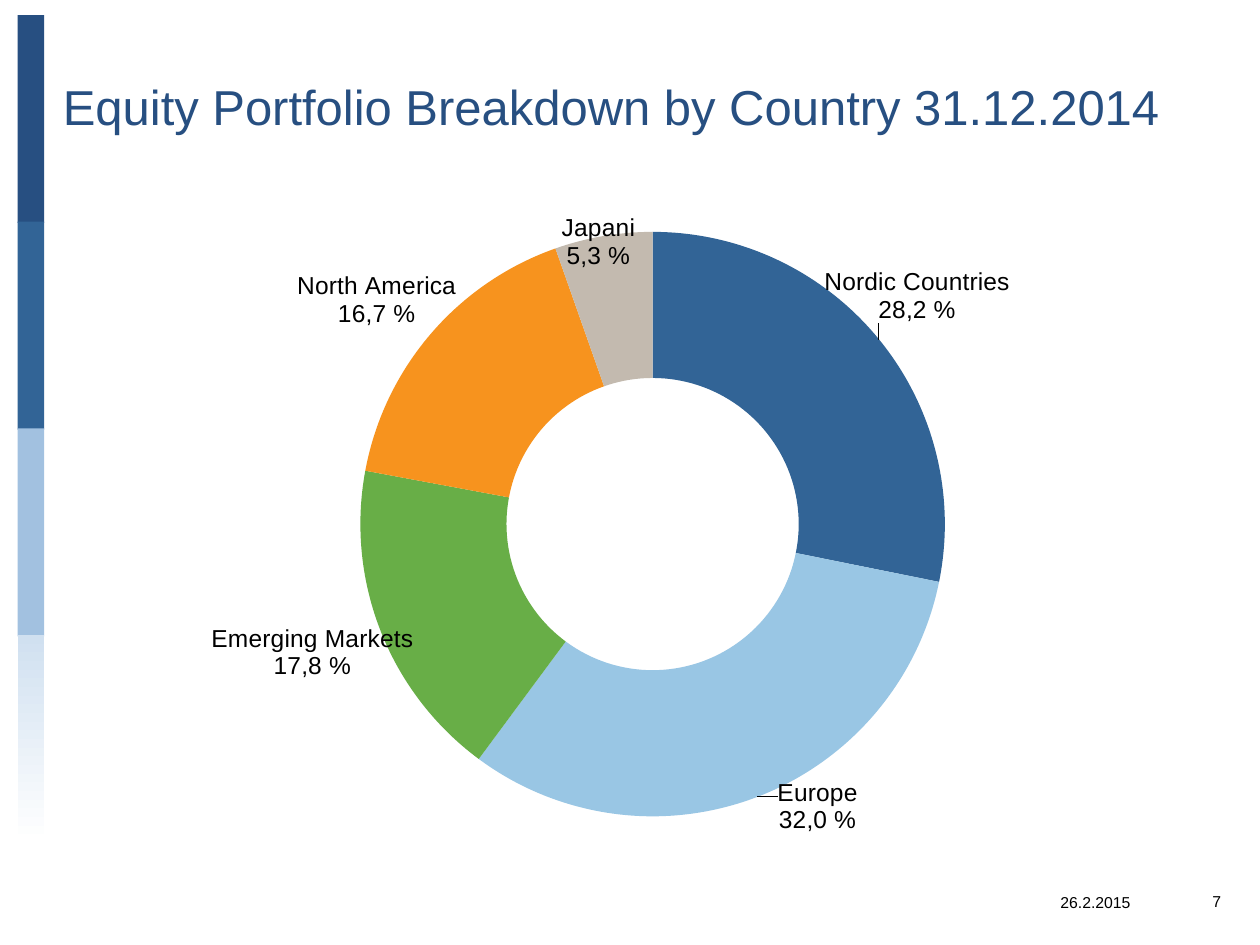
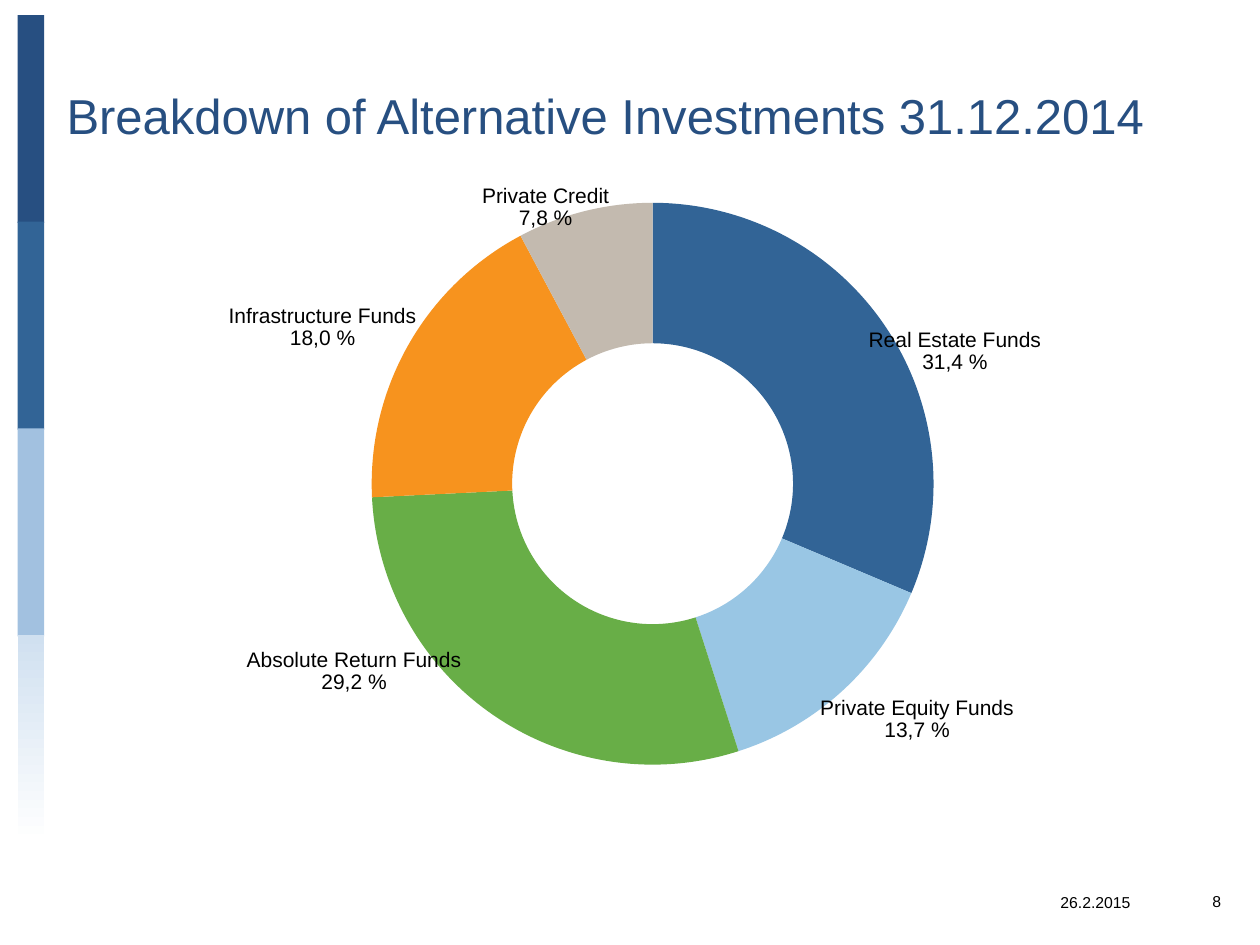
from dataclasses import dataclass
from math import cos, pi, sin

from pptx import Presentation
from pptx import oxml
from pptx.chart import data as chart_data
from pptx.dml import color
from pptx.enum import chart as chart_enum, shapes, text
from pptx.oxml import ns
from pptx.util import Inches, Pt

FONT = "Arial"
COLORS = {
    "navy": "274F81",
    "blue": "326496",
    "pale": "A2C1E0",
    "mist": "D0E0F0",
    "white": "FFFFFF",
    "black": "000000",
    "sky": "99C6E4",
    "green": "68AE47",
    "orange": "F7931E",
    "stone": "C3BAAF",
}
SLICE_COLORS = ["blue", "sky", "green", "orange", "stone"]
BAND_COLORS = ["navy", "blue", "pale", None]  # None marks the fading band
BAND_PITCH = 1.64
DATE = "26.2.2015"
PERCENT = "0.0\\ %"


@dataclass(frozen=True)
class Box:
    left: float
    top: float
    width: float
    height: float

    def lengths(self) -> list:
        return [Inches(v) for v in (self.left, self.top, self.width, self.height)]


@dataclass(frozen=True)
class Slice:
    name: str
    value: float
    share: str
    center: tuple[float, float]  # label centre on the slide, inches


@dataclass(frozen=True)
class Breakdown:
    title: str
    title_box: Box
    number: int
    chart_box: Box
    ring_center: tuple[float, float]
    ring_radius: float
    label_size: int
    leader_lines: bool
    slices: list[Slice]


BREAKDOWNS = [
    Breakdown(
        "Equity Portfolio Breakdown by Country 31.12.2014",
        Box(0.4, 0.13, 9.71, 1.42), 7,
        Box(1.61, 1.7, 7.06, 4.92), (5.18, 4.16), 2.32, 14, True,
        [
            Slice("Nordic Countries", 0.282, "28,2 %", (7.28, 2.35)),
            Slice("Europe", 0.32, "32,0 %", (6.49, 6.41)),
            Slice("Emerging Markets", 0.178, "17,8 %", (2.48, 5.18)),
            Slice("North America", 0.167, "16,7 %", (2.99, 2.38)),
            Slice("Japani", 0.054, "5,3 %", (4.75, 1.92)),
        ],
    ),
    Breakdown(
        "Breakdown of Alternative Investments 31.12.2014",
        Box(0.43, 0.28, 10.07, 1.26), 8,
        Box(1.61, 1.47, 7.11, 4.74), (5.18, 3.84), 2.23, 12, False,
        [
            Slice("Real Estate Funds", 0.314, "31,4 %", (7.58, 2.79)),
            Slice("Private Equity Funds", 0.137, "13,7 %", (7.28, 5.71)),
            Slice("Absolute Return Funds", 0.292, "29,2 %", (2.81, 5.33)),
            Slice("Infrastructure Funds", 0.18, "18,0 %", (2.56, 2.6)),
            Slice("Private Credit", 0.078, "7,8 %", (4.33, 1.64)),
        ],
    ),
]


def rgb(name: str) -> color.RGBColor:
    return color.RGBColor.from_string(COLORS[name])


def style_font(font, size: int, name: str = "black") -> None:
    font.name, font.size = FONT, Pt(size)
    font.color.rgb = rgb(name)


def add_text(slide, box: Box, words: str, size: int, name: str = "black",
             align=text.PP_ALIGN.RIGHT) -> None:
    frame = slide.shapes.add_textbox(*box.lengths()).text_frame
    frame.word_wrap = True
    frame.vertical_anchor = text.MSO_ANCHOR.MIDDLE
    paragraph = frame.paragraphs[0]
    paragraph.text, paragraph.alignment = words, align
    style_font(paragraph.font, size, name)


def add_bands(slide) -> None:
    for index, name in enumerate(BAND_COLORS):
        box = Box(0.14, 0.12 + index * BAND_PITCH, 0.21, 1.65)
        band = slide.shapes.add_shape(shapes.MSO_SHAPE.RECTANGLE, *box.lengths())
        band.shadow.inherit = False
        band.line.fill.background()
        if name:
            band.fill.solid()
            band.fill.fore_color.rgb = rgb(name)
        else:
            band.fill.gradient()
            band.fill.gradient_angle = 90
            for stop, stop_name in zip(band.fill.gradient_stops, ("white", "mist")):
                stop.color.rgb = rgb(stop_name)


def layout_xml(x: float, y: float, size: tuple[float, float] | None = None):
    """Manual layout in fractions of the chart; a size fixes the plot area."""
    values = [("x", x), ("y", y)]
    modes = ""
    if size:
        modes = '<c:layoutTarget val="inner"/><c:xMode val="edge"/><c:yMode val="edge"/>'
        values += [("w", size[0]), ("h", size[1])]
    body = "".join(f'<c:{tag} val="{value:.4f}"/>' for tag, value in values)
    return oxml.parse_xml(f'<c:layout {ns.nsdecls("c")}><c:manualLayout>'
                          f"{modes}{body}</c:manualLayout></c:layout>")


def add_ring(slide, breakdown: Breakdown) -> None:
    box, radius = breakdown.chart_box, breakdown.ring_radius
    center_x, center_y = breakdown.ring_center
    source = chart_data.CategoryChartData(number_format=PERCENT)
    source.categories = [part.name for part in breakdown.slices]
    source.add_series(breakdown.title, [part.value for part in breakdown.slices])
    chart = slide.shapes.add_chart(
        chart_enum.XL_CHART_TYPE.DOUGHNUT, *box.lengths(), source).chart
    chart.has_legend = chart.has_title = False
    style_font(chart.font, 18)
    plot = chart.plots[0]
    plot.vary_by_categories = True
    series = plot.series[0]

    # Series labels
    labels = series.data_labels
    labels.show_value = labels.show_category_name = True
    labels.number_format, labels.number_format_is_linked = PERCENT, False
    style_font(labels.font, breakdown.label_size)

    # Slices and their label texts
    for index, (part, color_name) in enumerate(zip(breakdown.slices, SLICE_COLORS)):
        point = series.points[index]
        point.format.fill.solid()
        point.format.fill.fore_color.rgb = rgb(color_name)
        point.format.line.fill.background()
        frame = point.data_label.text_frame
        for line, words in enumerate((part.name, part.share)):
            paragraph = frame.add_paragraph() if line else frame.paragraphs[0]
            run = paragraph.add_run()
            run.text = words
            style_font(run.font, breakdown.label_size)

    # Each label moves from the middle of its slice to its own centre
    chart_space = chart._chartSpace
    total = sum(part.value for part in breakdown.slices)
    before = 0.0
    for part, label in zip(breakdown.slices, chart_space.xpath(".//c:ser/c:dLbls/c:dLbl")):
        angle = 2 * pi * (before + part.value / 2) / total
        before += part.value
        shift_x = part.center[0] - center_x - 0.75 * radius * sin(angle)
        shift_y = part.center[1] - center_y + 0.75 * radius * cos(angle)
        label.insert(1, layout_xml(shift_x / box.width, shift_y / box.height))
    for leader in chart_space.xpath(".//c:ser/c:dLbls/c:showLeaderLines"):
        leader.set("val", str(int(breakdown.leader_lines)))

    # Plot area
    plot_area = chart_space.xpath(".//c:plotArea")[0]
    for layout in plot_area.xpath("./c:layout"):
        plot_area.remove(layout)
    plot_area.insert(0, layout_xml(
        (center_x - radius - box.left) / box.width,
        (center_y - radius - box.top) / box.height,
        (2 * radius / box.width, 2 * radius / box.height)))


def add_breakdown(presentation, breakdown: Breakdown) -> None:
    slide = presentation.slides.add_slide(presentation.slide_layouts[6])
    add_bands(slide)
    add_text(slide, breakdown.title_box, breakdown.title, 28, "navy", text.PP_ALIGN.LEFT)
    add_ring(slide, breakdown)
    # Footer
    add_text(slide, Box(8.12, 6.96, 0.95, 0.4), DATE, 9)
    add_text(slide, Box(9.16, 6.95, 0.63, 0.4), str(breakdown.number), 9)


def main() -> None:
    presentation = Presentation()
    presentation.slide_width, presentation.slide_height = Inches(10), Inches(7.5)
    for breakdown in BREAKDOWNS:
        add_breakdown(presentation, breakdown)
    presentation.save("out.pptx")


if __name__ == "__main__":
    main()
